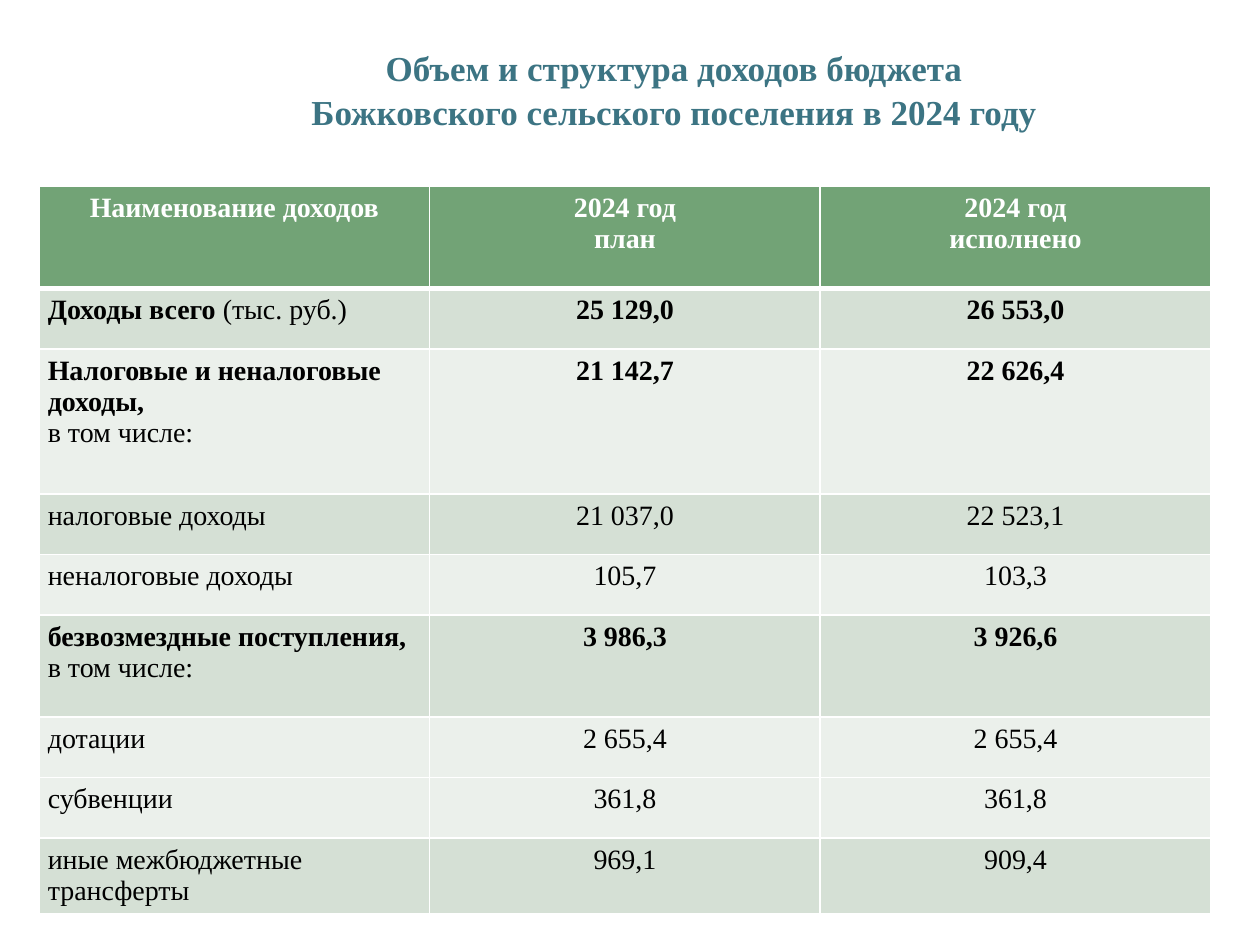
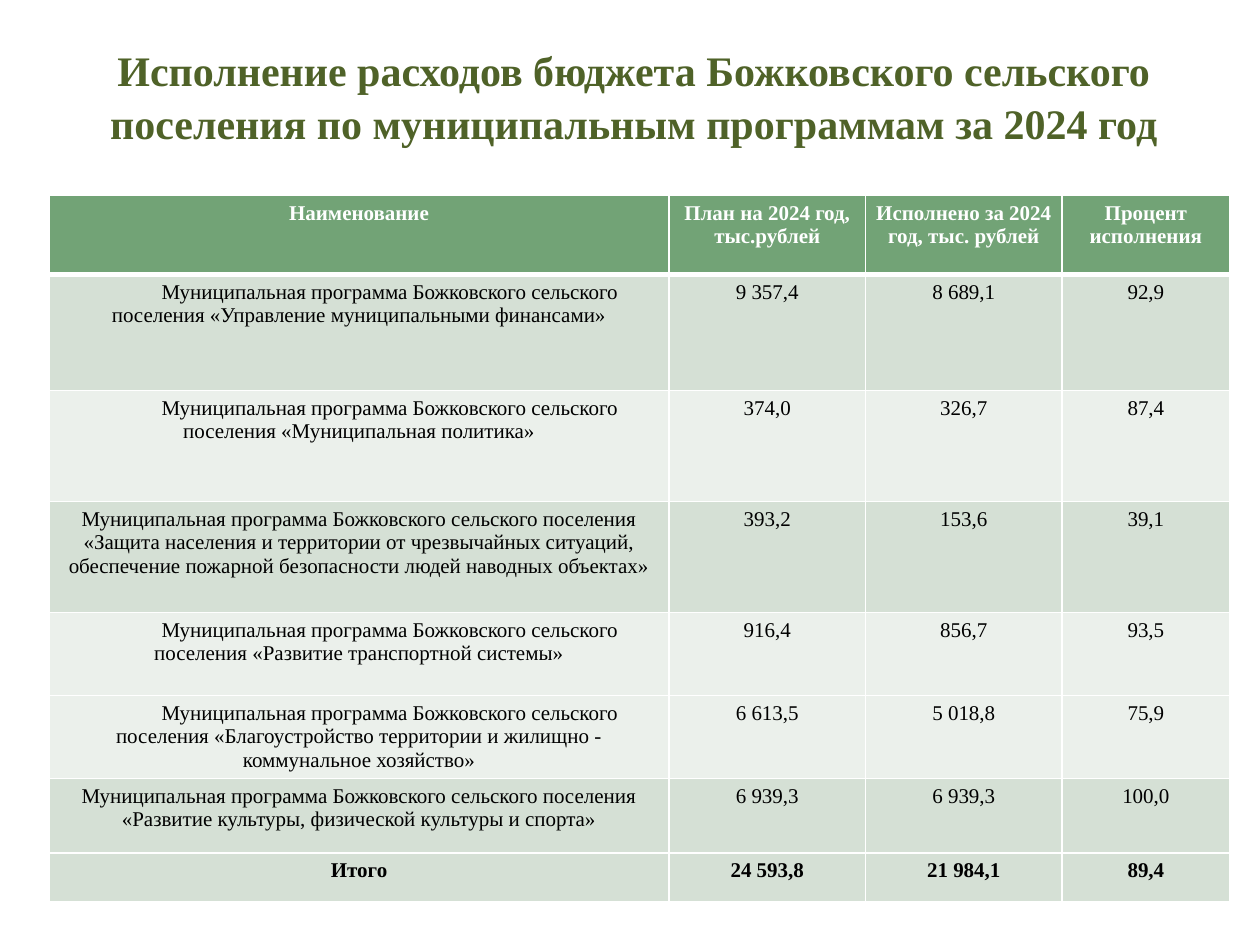
from lxml import etree
from pptx import Presentation
from pptx.dml.color import RGBColor
from pptx.enum.text import MSO_ANCHOR, PP_ALIGN
from pptx.oxml.ns import qn
from pptx.util import Inches, Pt

CENTER, LEFT = PP_ALIGN.CENTER, PP_ALIGN.LEFT
TOP = MSO_ANCHOR.TOP

FONT = "Times New Roman"
WHITE, BLACK = "FFFFFF", "000000"
HEADER_GREEN, DARK_BAND, LIGHT_BAND = "72A376", "D5E0D5", "EBF0EB"
TITLE_TEAL, TITLE_OLIVE = "3C7483", "4F6228"
THIN, THICK = 0.96, 3
TITLE_ONLY = 5

# Income rows: bold label, plain label, plan, actual, band, height
INCOME_HEADER = ["Наименование доходов", "2024 год\nплан", "2024 год\nисполнено"]
INCOME_ROWS = [
    ("Доходы всего ", "(тыс. руб.)", "25 129,0", "26 553,0", DARK_BAND, 0.48),
    ("Налоговые и неналоговые доходы,\n", "в том числе:", "21 142,7", "22 626,4", LIGHT_BAND, 1.15),
    ("", "налоговые доходы", "21 037,0", "22 523,1", DARK_BAND, 0.48),
    ("", "неналоговые доходы", "105,7", "103,3", LIGHT_BAND, 0.48),
    ("безвозмездные поступления,\n", "в том числе:", "3 986,3", "3 926,6", DARK_BAND, 0.81),
    ("", "дотации", "2 655,4", "2 655,4", LIGHT_BAND, 0.48),
    ("", "субвенции", "361,8", "361,8", LIGHT_BAND, 0.48),
    ("", "иные межбюджетные трансферты", "969,1", "909,4", DARK_BAND, 0.6),
]

# Programme rows: name, first-line indent, values, band, height
PROGRAMME = "Муниципальная программа Божковского сельского поселения "
PROGRAMME_HEADER = ["Наименование", "План на 2024 год,\nтыс.рублей",
                    "Исполнено за 2024 год, тыс. рублей", "Процент исполнения"]
PROGRAMME_ROWS = [
    ("«Управление муниципальными финансами»", 0.49,
     ("9 357,4", "8 689,1", "92,9"), DARK_BAND, 0.92),
    ("«Муниципальная политика»", 0.49,
     ("374,0", "326,7", "87,4"), LIGHT_BAND, 0.88),
    ("«Защита населения и территории от чрезвычайных ситуаций, "
     "обеспечение пожарной безопасности людей наводных объектах»", 0,
     ("393,2", "153,6", "39,1"), DARK_BAND, 0.88),
    ("«Развитие транспортной системы»", 0.49,
     ("916,4", "856,7", "93,5"), LIGHT_BAND, 0.66),
    ("«Благоустройство территории и жилищно - коммунальное хозяйство»", 0.49,
     ("6 613,5", "5 018,8", "75,9"), LIGHT_BAND, 0.66),
    ("«Развитие культуры, физической культуры и спорта»", 0,
     ("6 939,3", "6 939,3", "100,0"), DARK_BAND, 0.59),
]
TOTAL_ROW = ["Итого", "24 593,8", "21 984,1", "89,4"]


def rgb(color):
    return RGBColor.from_string(color)


def style_paragraph(paragraph, size, color, bold=None, align=CENTER):
    paragraph.alignment = align
    font = paragraph.font
    font.name, font.size, font.bold = FONT, Pt(size), bold
    font.color.rgb = rgb(color)


def add_title_slide(presentation, lines, box, size, color):
    """Add a slide whose title has one paragraph per line."""
    slide = presentation.slides.add_slide(presentation.slide_layouts[TITLE_ONLY])
    title = slide.shapes.title
    title.left, title.top, title.width, title.height = map(Inches, box)
    frame = title.text_frame
    frame.text = "\n".join(lines)
    frame.word_wrap = True
    frame.vertical_anchor = TOP
    for paragraph in frame.paragraphs:
        style_paragraph(paragraph, size, color, True)
        paragraph.line_spacing = 1.04
        paragraph.space_before = Pt(0)
    return slide


def add_grid(slide, left, top, column_widths, row_heights):
    """Add an empty table with the given columns and rows."""
    frame = slide.shapes.add_table(
        len(row_heights), len(column_widths), Inches(left), Inches(top),
        Inches(sum(column_widths)), Inches(sum(row_heights)))
    table = frame.table
    for column, width in zip(table.columns, column_widths):
        column.width = Inches(width)
    for row, height in zip(table.rows, row_heights):
        row.height = Inches(height)
    return table


def set_borders(cell, top=THIN, bottom=THIN):
    properties = cell._tc.get_or_add_tcPr()
    for side, width in (("L", THIN), ("R", THIN), ("T", top), ("B", bottom)):
        line = etree.SubElement(properties, qn(f"a:ln{side}"), w=str(Pt(width)))
        fill = etree.SubElement(line, qn("a:solidFill"))
        etree.SubElement(fill, qn("a:srgbClr"), val=WHITE)


def format_cell(cell, band, row_number):
    set_borders(cell, THICK if row_number == 1 else THIN,
                THICK if row_number == 0 else THIN)
    cell.fill.solid()
    cell.fill.fore_color.rgb = rgb(band)
    cell.margin_left = cell.margin_right = Inches(0.07)
    cell.margin_top = cell.margin_bottom = Inches(0.05)
    cell.vertical_anchor = TOP


def fill_row(table, row_number, texts, band, size, color=BLACK, bold=False):
    """Write one row of centred cells."""
    for column_number, text in enumerate(texts):
        cell = table.cell(row_number, column_number)
        format_cell(cell, band, row_number)
        cell.text = text
        for paragraph in cell.text_frame.paragraphs:
            style_paragraph(paragraph, size, color, bold)


def write_income_label(cell, strong, plain, size):
    """Write a bold part and a plain part; a line end splits paragraphs."""
    cell.text = ""
    frame = cell.text_frame
    paragraph = frame.paragraphs[0]
    style_paragraph(paragraph, size, BLACK, align=LEFT)
    if strong:
        run = paragraph.add_run()
        run.text = strong.rstrip("\n")
        run.font.bold = True
    if strong.endswith("\n"):
        paragraph = frame.add_paragraph()
        style_paragraph(paragraph, size, BLACK, align=LEFT)
    run = paragraph.add_run()
    run.text = plain
    run.font.bold = False


def build_income_slide(presentation):
    slide = add_title_slide(
        presentation,
        ["Объем и структура доходов бюджета",
         "Божковского сельского поселения в 2024 году"],
        (1.17, 0.31, 8.36, 0.77), 20, TITLE_TEAL)
    heights = [0.81] + [row[-1] for row in INCOME_ROWS]
    table = add_grid(slide, 0.31, 1.48, [3.1] * 3, heights)
    size = 16
    fill_row(table, 0, INCOME_HEADER, HEADER_GREEN, size, WHITE, True)
    for number, (strong, plain, plan, actual, band, _) in enumerate(INCOME_ROWS, 1):
        fill_row(table, number, ["", plan, actual], band, size, bold=bool(strong))
        write_income_label(table.cell(number, 0), strong, plain, size)


def build_programme_slide(presentation):
    slide = add_title_slide(
        presentation,
        ["Исполнение расходов бюджета Божковского сельского "
         "поселения по муниципальным программам за 2024 год"],
        (0.42, 0.29, 9.22, 1.1), 24, TITLE_OLIVE)
    heights = [0.63] + [row[-1] for row in PROGRAMME_ROWS] + [0.39]
    table = add_grid(slide, 0.39, 1.55, [4.92, 1.56, 1.56, 1.33], heights)
    size = 12
    fill_row(table, 0, PROGRAMME_HEADER, HEADER_GREEN, size, WHITE, True)
    for number, (name, indent, values, band, _) in enumerate(PROGRAMME_ROWS, 1):
        fill_row(table, number, [PROGRAMME + name, *values], band, size)
        paragraph = table.cell(number, 0).text_frame.paragraphs[0]
        paragraph._p.get_or_add_pPr().set("indent", str(Inches(indent)))
    fill_row(table, len(heights) - 1, TOTAL_ROW, DARK_BAND, size, bold=True)


def main():
    presentation = Presentation()
    presentation.slide_width, presentation.slide_height = Inches(10), Inches(7.5)
    build_income_slide(presentation)
    build_programme_slide(presentation)
    presentation.save("out.pptx")


if __name__ == "__main__":
    main()
